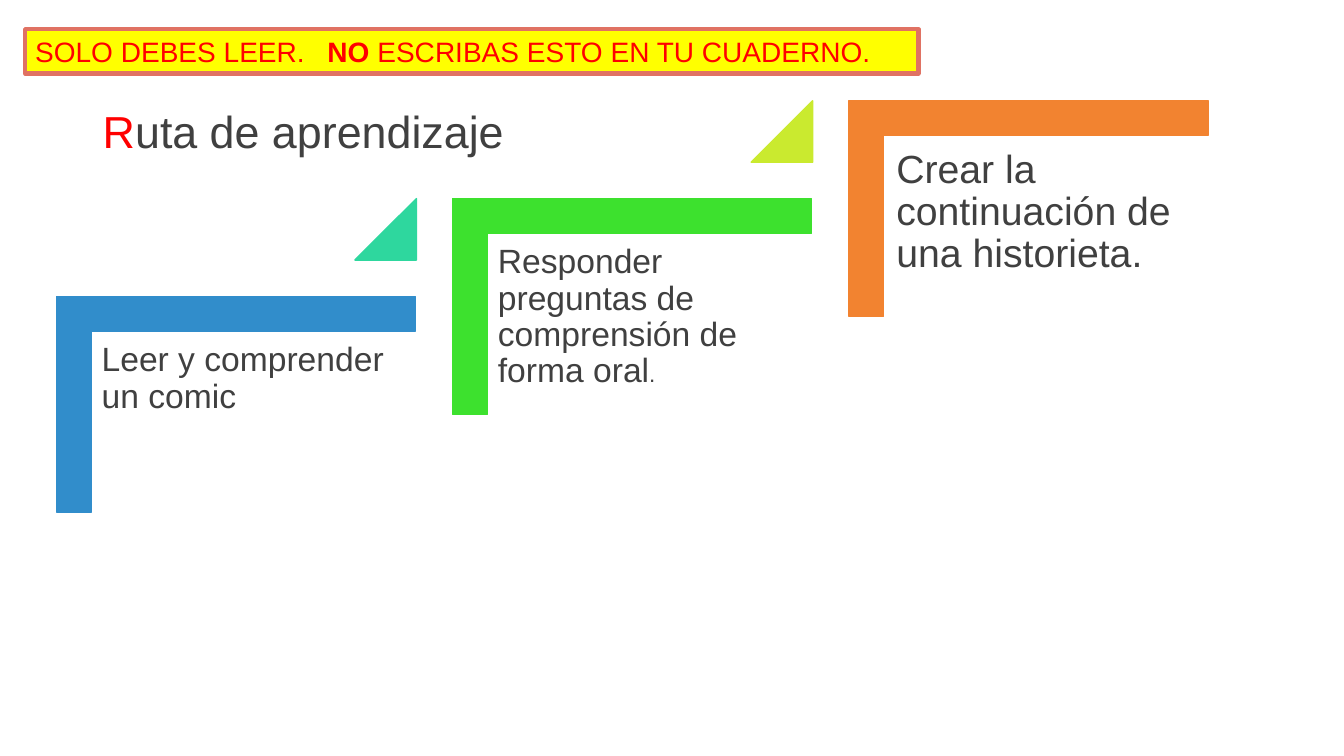
import pptx
import pptx.util
import pptx.dml.color
import pptx.enum.shapes
import pptx.enum.text
import pptx.oxml.ns
import lxml.etree

Inches = pptx.util.Inches
MSO_SHAPE = pptx.enum.shapes.MSO_SHAPE
MSO_ANCHOR = pptx.enum.text.MSO_ANCHOR

THEME = {
    "font": "Arial",
    "text": "404040",
    "alert": "FF0000",
    "banner_fill": "FFFF00",
    "banner_line": "E07263",
    "title_size": 32,
    "banner_size": 20,
    "step_size": 24,
    "goal_size": 28,
    "period_size": 16,
}


def add_colored_shape(kind, box, fill, line, line_width):
    shape = slide.shapes.add_shape(kind, *[Inches(length) for length in box])
    shape.shadow.inherit = False
    shape.fill.solid()
    shape.fill.fore_color.rgb = pptx.dml.color.RGBColor.from_string(fill)
    shape.line.color.rgb = pptx.dml.color.RGBColor.from_string(line)
    shape.line.width = pptx.util.Pt(line_width)
    return shape


def write_runs(shape, runs, anchor, inset_x, inset_y, line_spacing):
    """Fill the shape with one paragraph of (text, size, color, bold) runs."""
    frame = shape.text_frame
    settings = {
        "word_wrap": True,
        "vertical_anchor": anchor,
        "margin_left": Inches(inset_x),
        "margin_right": Inches(inset_x),
        "margin_top": Inches(inset_y),
        "margin_bottom": Inches(inset_y),
    }
    for name, value in settings.items():
        setattr(frame, name, value)
    paragraph = frame.paragraphs[0]
    paragraph.alignment = pptx.enum.text.PP_ALIGN.LEFT
    paragraph.line_spacing = line_spacing
    for text, size, color, bold in runs:
        run = paragraph.add_run()
        run.text = text
        font_format = {"name": THEME["font"], "size": pptx.util.Pt(size), "bold": bold}
        for name, value in font_format.items():
            setattr(run.font, name, value)
        run.font.color.rgb = pptx.dml.color.RGBColor.from_string(color)
    return paragraph


presentation = pptx.Presentation()
presentation.slide_width = Inches(13.33)
presentation.slide_height = Inches(7.5)
slide = presentation.slides.add_slide(presentation.slide_layouts[6])

# Title
title = slide.shapes.add_textbox(Inches(0.92), Inches(0.44), Inches(10.75), Inches(1.18))
title_runs = [
    ("R", THEME["title_size"], THEME["alert"], False),
    ("uta de aprendizaje", THEME["title_size"], THEME["text"], False),
]
write_runs(title, title_runs, MSO_ANCHOR.BOTTOM, 0.1, 0.05, 0.9)

# Rising steps: corner color, triangle color, text inset, text pieces with sizes
STEP_RIGHT, STEP_UP = 3.93, 0.97
steps = [
    ("318DCB", "2ED79E", 0.1,
     [("Leer y comprender un comic", THEME["step_size"])]),
    ("3DE12E", "CAEA2F", 0.1,
     [("Responder preguntas de comprensión de forma oral", THEME["step_size"]),
      (".", THEME["period_size"])]),
    ("F28330", None, 0.12,
     [("Crear la continuación de una historieta.", THEME["goal_size"])]),
]
for index, (corner_color, triangle_color, inset, pieces) in enumerate(steps):
    right, up = index * STEP_RIGHT, index * STEP_UP
    corner = add_colored_shape(
        MSO_SHAPE.CORNER, (1.27 + right, 2.23 - up, 2.14, 3.56), corner_color, corner_color, 1)
    corner.rotation = 90
    corner.adjustments[0] = corner.adjustments[1] = 0.161

    label = slide.shapes.add_textbox(
        Inches(0.91 + right), Inches(3.3 - up), Inches(3.21), Inches(2.81))
    label_runs = [(text, size, THEME["text"], False) for text, size in pieces]
    write_runs(label, label_runs, MSO_ANCHOR.TOP, inset, inset, 0.9)

    if triangle_color:
        triangle = add_colored_shape(
            MSO_SHAPE.ISOSCELES_TRIANGLE, (3.52 + right, 1.97 - up, 0.61, 0.61),
            triangle_color, triangle_color, 1)
        triangle.adjustments[0] = 1

# Reading notice, with a tab stop before "NO"
banner = add_colored_shape(
    MSO_SHAPE.RECTANGLE, (0.25, 0.29, 8.86, 0.44),
    THEME["banner_fill"], THEME["banner_line"], 3)
banner_runs = [
    (text, THEME["banner_size"], THEME["alert"], bold)
    for text, bold in [
        ("SOLO DEBES LEER.\t", False), ("NO", True), (" ESCRIBAS ESTO EN TU CUADERNO.", False)]
]
notice = write_runs(banner, banner_runs, MSO_ANCHOR.TOP, 0.1, 0.05, 1.0)
banner.text_frame.auto_size = pptx.enum.text.MSO_AUTO_SIZE.SHAPE_TO_FIT_TEXT
qn = pptx.oxml.ns.qn
properties = notice._p.get_or_add_pPr()
tab_list = lxml.etree.SubElement(properties, qn("a:tabLst"))
lxml.etree.SubElement(tab_list, qn("a:tab"), pos=str(Inches(2.9)), algn="l")

presentation.save("out.pptx")
